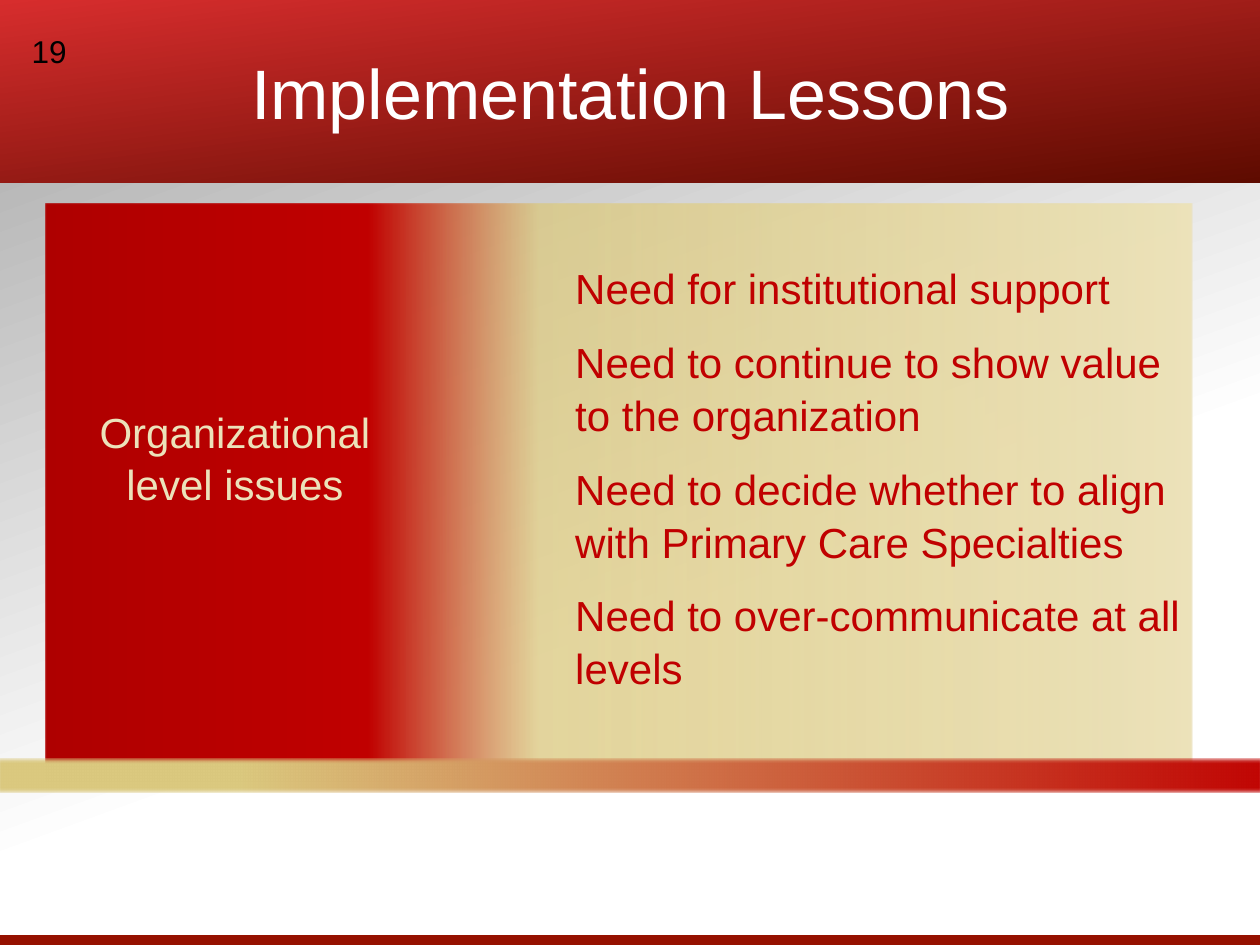
from lxml.etree import SubElement
from pptx import Presentation
from pptx.dml.color import RGBColor
from pptx.enum.shapes import MSO_SHAPE as Shape
from pptx.enum.text import MSO_ANCHOR as Anchor, MSO_AUTO_SIZE as AutoSize, PP_ALIGN as Align
from pptx.oxml.ns import qn
from pptx.util import Pt

# Content
TITLE = "Implementation Lessons"
LABEL = "Organizational level issues"
LESSONS = [
    "Need for institutional support",
    "Need to continue to show value to the organization",
    "Need to decide whether to align with Primary Care Specialties",
    "Need to over-communicate at all levels",
]
NUMBER = "19"

# Colours
BLACK = RGBColor(0x00, 0x00, 0x00)
WHITE = RGBColor(0xFF, 0xFF, 0xFF)
GREY = RGBColor(0xA6, 0xA6, 0xA6)
RED = RGBColor(0xC0, 0x00, 0x00)
DEEP_RED = RGBColor(0xAE, 0x00, 0x00)
BRIGHT_RED = RGBColor(0xD7, 0x2D, 0x2D)
MAROON = RGBColor(0x5E, 0x0B, 0x00)
FOOTER_RED = RGBColor(0x95, 0x11, 0x00)
SAND = RGBColor(0xDB, 0xC9, 0x7F)
CREAM = RGBColor(0xEC, 0xE2, 0xBA)

# Gradient stops: position %, colour, opacity %
PAGE_STOPS = [(0, GREY, 100), (62, WHITE, 100), (100, WHITE, 100)]
TITLE_STOPS = [(0, BRIGHT_RED, 100), (100, MAROON, 100)]
PANEL_STOPS = [(0, DEEP_RED, 100), (28, RED, 100), (43, SAND, 76), (100, CREAM, 100)]
BAR_STOPS = [(0, SAND, 100), (20, SAND, 100), (100, RED, 100)]

# Places in points: left, top, width, height
WIDTH, HEIGHT = 720, 540
FOOTER_AT = (0, 534.3, WIDTH, 7)
PANEL_AT = (26, 116.5, 655.5, 330)
TITLE_AT = (0, 0, WIDTH, 104.5)
LABEL_AT = (26, 227, 216.5, 85.5)
BAR_AT = (-13, 433.5, 750, 19.5)
LESSONS_AT = (317, 145, 364.5, 250.5)
NUMBER_AT = (11, 15, 64, 29)


def paint_gradient(fill, element, stops, angle):
    """Fill with the given stops; the angle runs clockwise."""
    fill.gradient()
    fill.gradient_angle = -angle % 360
    stop_list = element.xpath(".//a:gsLst")[0]
    for old in list(stop_list):
        stop_list.remove(old)
    for position, colour, opacity in stops:
        stop = SubElement(stop_list, qn("a:gs"), pos=str(position * 1000))
        tint = SubElement(stop, qn("a:srgbClr"), val=str(colour))
        if opacity < 100:
            SubElement(tint, qn("a:alpha"), val=str(opacity * 1000))


def place(shape, at):
    shape.left, shape.top, shape.width, shape.height = map(Pt, at)


def add_block(page, kind, at):
    block = page.shapes.add_shape(kind, *map(Pt, at))
    block.shadow.inherit = False
    block.line.fill.background()
    return block


def write(shape, lines, size, colour, align, anchor=Anchor.TOP, spacing=1.0, gap=0, indent=0):
    frame = shape.text_frame
    frame.word_wrap = True
    frame.auto_size = AutoSize.NONE
    frame.vertical_anchor = anchor
    for index, line in enumerate(lines):
        para = frame.paragraphs[0] if index == 0 else frame.add_paragraph()
        para.text = line
        para.alignment = align
        para.line_spacing = spacing
        para.space_before = Pt(gap if index else 0)
        props = para._p.get_or_add_pPr()
        props.set("marL", str(Pt(indent)))
        props.set("indent", "0")
        SubElement(props, qn("a:buNone"))
        para.font.name = "Arial"
        para.font.size = Pt(size)
        para.font.color.rgb = colour


def main():
    deck = Presentation()
    deck.slide_width, deck.slide_height = Pt(WIDTH), Pt(HEIGHT)
    page = deck.slides.add_slide(deck.slide_layouts.get_by_name("Two Content"))
    title, label, lessons = list(page.placeholders)[:3]

    # Background, footer strip and panel, behind the text
    paint_gradient(page.background.fill, page._element, PAGE_STOPS, 70)
    footer = add_block(page, Shape.RECTANGLE, FOOTER_AT)
    footer.fill.solid()
    footer.fill.fore_color.rgb = FOOTER_RED
    panel = add_block(page, Shape.ROUNDED_RECTANGLE, PANEL_AT)
    panel.adjustments[0] = 0
    paint_gradient(panel.fill, panel._element, PANEL_STOPS, 0)
    for block in (footer, panel):
        title._element.addprevious(block._element)

    # Title band
    place(title, TITLE_AT)
    paint_gradient(title.fill, title._element, TITLE_STOPS, 83)
    write(title, [TITLE], 40, WHITE, Align.CENTER, Anchor.MIDDLE)

    # Label and lessons
    place(label, LABEL_AT)
    write(label, [LABEL], 24, CREAM, Align.CENTER, spacing=1.05)
    place(lessons, LESSONS_AT)
    write(lessons, LESSONS, 24, RED, Align.LEFT, spacing=1.05, gap=12, indent=4.5)

    # Soft-edged bar across the panel's foot
    bar = add_block(page, Shape.ROUNDED_RECTANGLE, BAR_AT)
    paint_gradient(bar.fill, bar._element, BAR_STOPS, 0)
    effects = bar._element.spPr.find(qn("a:effectLst"))
    SubElement(effects, qn("a:softEdge"), rad=str(Pt(1)))

    # Slide number
    number = page.shapes.add_textbox(*map(Pt, NUMBER_AT))
    write(number, [NUMBER], 18, BLACK, Align.LEFT)

    deck.save("out.pptx")


if __name__ == "__main__":
    main()
